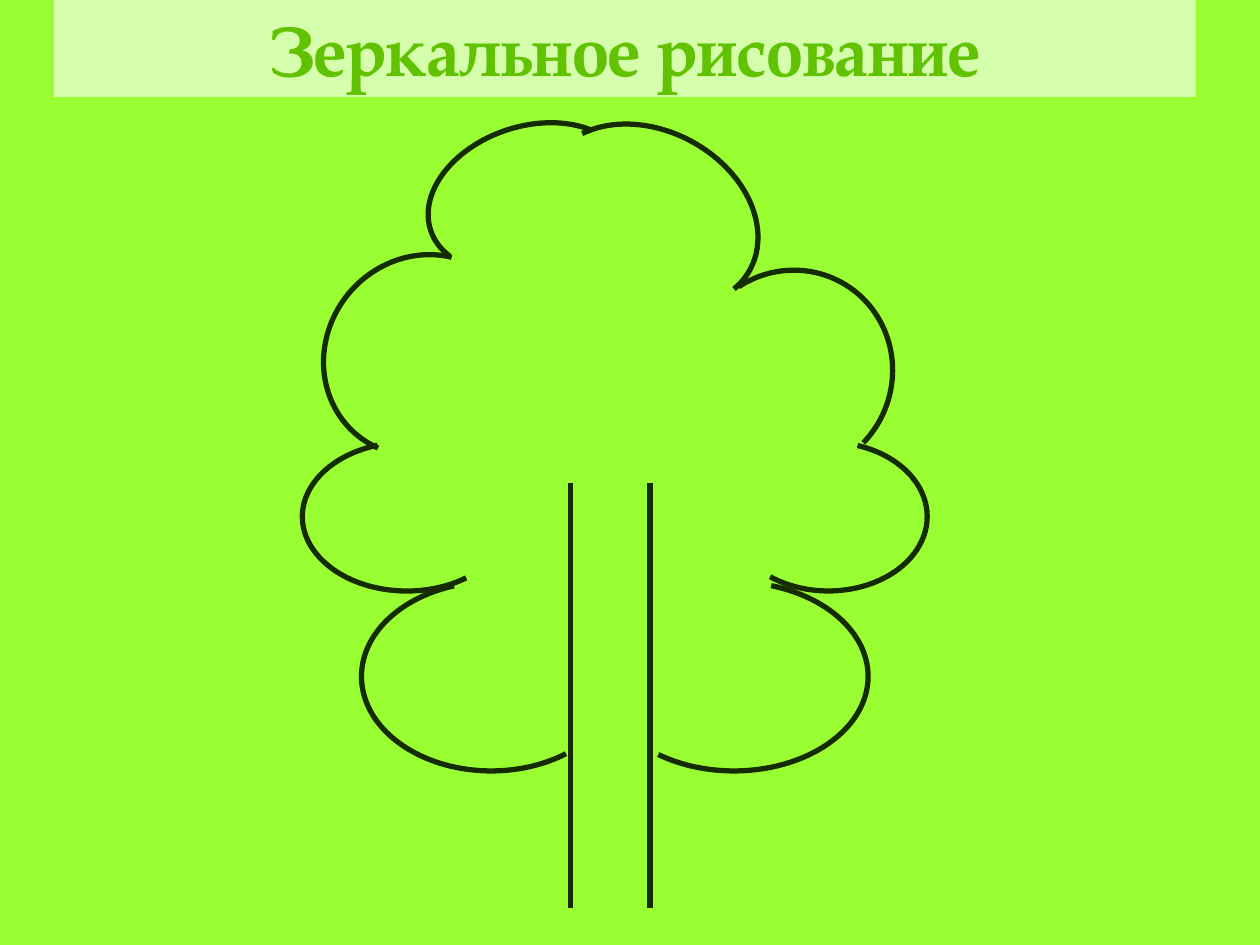
import pptx
import pptx.util
import pptx.dml.color
import pptx.enum.shapes
import pptx.enum.text
import pptx.oxml
import pptx.oxml.ns

Pt = pptx.util.Pt
SHAPE = pptx.enum.shapes.MSO_SHAPE
INK = "152B00"
TITLE = "Зеркальное рисование"
TITLE_BOX = (31, 0, 652.3, 55.4)
TRUNK_X = (371.5, 326.2)
TRUNK_Y = (275.8, 519.1)
CROWN = [
    ((342.7, 332.6, 153.4, 108), 0, None, (175.4, 80.44)),
    ((206.6, 332.6, 148.3, 108), 0, "flipH", (175.4, 80.44)),
    ((416.9, 252.7, 113, 85), 0, None, (175.4, 80.44)),
    ((172.8, 252.7, 119.5, 85), 0, "flipH", (175.4, 80.44)),
    ((393.8, 155.5, 117.4, 114.5), 298.2, None, (179.98, 63.83)),
    ((186.5, 144, 110.2, 118.1), 38.8, "flipH", (175.4, 61.82)),
    ((323.3, 59, 97.2, 128.9), 298.2, None, (175.2, 61.82)),
    ((261.4, 54, 81.4, 118.1), 251.6, "flipV", (178.95, 64.77)),
]


def rgb(color):
    return pptx.dml.color.RGBColor.from_string(color)


def ink_line(sp):
    sp.line.color.rgb = rgb(INK)
    sp.line.width = Pt(3)


def add_title(s):
    sp = s.shapes.add_shape(SHAPE.RECTANGLE, *map(Pt, TITLE_BOX))
    sp.shadow.inherit = False
    sp.fill.solid()
    sp.fill.fore_color.rgb = rgb("D6FFAD")
    sp.line.fill.background()
    tf = sp.text_frame
    tf.word_wrap = True
    tf.auto_size = pptx.enum.text.MSO_AUTO_SIZE.SHAPE_TO_FIT_TEXT
    tf.vertical_anchor = pptx.enum.text.MSO_ANCHOR.TOP
    tf.text = TITLE
    p = tf.paragraphs[0]
    p.alignment = pptx.enum.text.PP_ALIGN.CENTER
    r = p.runs[0]
    r.font.name = "TeX Gyre Pagella"
    r.font.size = Pt(40)
    r.font.bold = True
    r.font.color.rgb = rgb("60C200")
    outline = pptx.oxml.parse_xml(
        f'<a:ln {pptx.oxml.ns.nsdecls("a")} w="12700"><a:solidFill>'
        '<a:srgbClr val="4D9900"/></a:solidFill></a:ln>')
    r._r.get_or_add_rPr().insert(0, outline)


def add_trunk(s):
    top, bottom = map(Pt, TRUNK_Y)
    for x in map(Pt, TRUNK_X):
        line = s.shapes.add_connector(
            pptx.enum.shapes.MSO_CONNECTOR.STRAIGHT, x, top, x, bottom)
        ink_line(line)
        line._element.spPr.append(pptx.oxml.parse_xml(
            f'<a:effectLst {pptx.oxml.ns.nsdecls("a")}/>'))


def add_crown(s):
    for box, rotation, flip, angles in CROWN:
        sp = s.shapes.add_shape(SHAPE.ARC, *map(Pt, box))
        sp.shadow.inherit = False
        sp.fill.background()
        ink_line(sp)
        sp.rotation = rotation
        if flip:
            sp._element.spPr.xfrm.set(flip, "1")
        for i, angle in enumerate(angles):
            sp.adjustments[i] = angle


def main():
    prs = pptx.Presentation()
    prs.slide_width, prs.slide_height = Pt(720), Pt(540)
    s = prs.slides.add_slide(prs.slide_layouts[6])
    s.background.fill.solid()
    s.background.fill.fore_color.rgb = rgb("99FF33")
    add_title(s)
    add_trunk(s)
    add_crown(s)
    prs.save("out.pptx")


if __name__ == "__main__":
    main()
